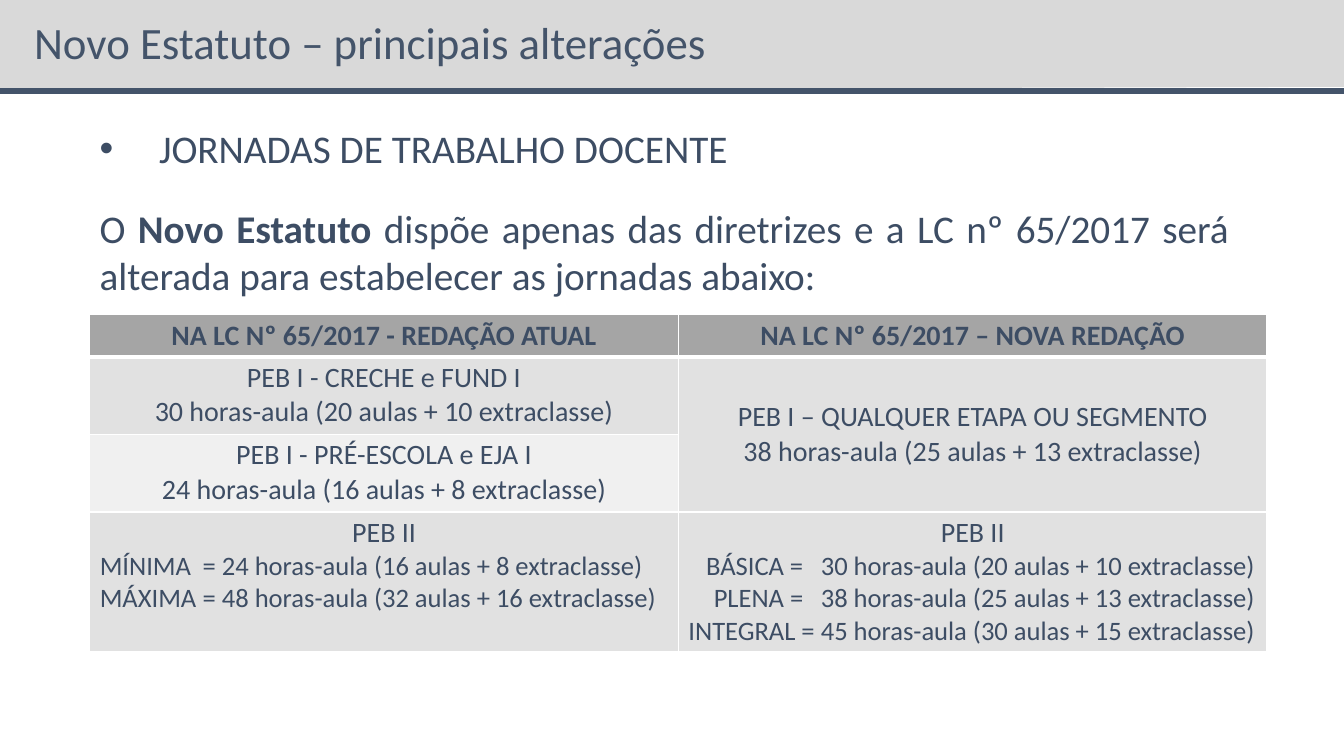
"""Build the slide that compares the current and the new teaching workloads."""
from dataclasses import dataclass

from lxml import etree
from pptx import Presentation
from pptx import util as u
from pptx.dml import color
from pptx.enum import shapes, text
from pptx.oxml import ns

FONT = "Calibri"
INK = "3D4D64"
SLATE = "44546A"
GREY = "E1E1E1"
LEFT, CENTER, JUSTIFY = text.PP_ALIGN.LEFT, text.PP_ALIGN.CENTER, text.PP_ALIGN.JUSTIFY
TOP, MIDDLE = text.MSO_ANCHOR.TOP, text.MSO_ANCHOR.MIDDLE


@dataclass
class Rule:
    start: tuple[float, float]
    end: tuple[float, float]
    color: str
    width: float


@dataclass
class Entry:
    row: int
    column: int
    heading: str
    lines: tuple[str, ...] = ()
    fill: str = GREY
    bold: bool = False
    anchor: text.MSO_ANCHOR = TOP
    line_size: float = 20
    line_align: text.PP_ALIGN = CENTER
    tabs: tuple[tuple[float, str], ...] = ()


RULES = [
    Rule((0, 32.4), (960, 29.5), "D9D9D9", 65),
    Rule((0, 64.8), (960, 64.8), SLATE, 4),
]
ROW_HEIGHTS = [30, 55.5, 55.5, 99.5]
COLUMN_WIDTH = 420.5
ENTRIES = [
    Entry(0, 0, "NA LC Nº 65/2017 - REDAÇÃO ATUAL", fill="A5A5A5", bold=True),
    Entry(0, 1, "NA LC Nº 65/2017 – NOVA REDAÇÃO", fill="A5A5A5", bold=True),
    Entry(1, 0, "PEB I - CRECHE e FUND I", ("30 horas-aula (20 aulas + 10 extraclasse)",)),
    Entry(1, 1, "PEB I – QUALQUER ETAPA OU SEGMENTO",
          ("38 horas-aula (25 aulas + 13 extraclasse)",), anchor=MIDDLE),
    Entry(2, 0, "PEB I - PRÉ-ESCOLA e EJA I",
          ("24 horas-aula (16 aulas + 8 extraclasse)",), fill="F0F0F0"),
    Entry(3, 0, "PEB II",
          ("MÍNIMA\t= 24 horas-aula (16 aulas + 8 extraclasse)",
           "MÁXIMA\t= 48 horas-aula (32 aulas + 16 extraclasse)"),
          line_size=19, line_align=LEFT, tabs=((73.5, "l"),)),
    Entry(3, 1, "PEB II",
          ("\tBÁSICA =\t30 horas-aula (20 aulas + 10 extraclasse)",
           "\tPLENA =\t38 horas-aula (25 aulas + 13 extraclasse)",
           "INTEGRAL =\t45 horas-aula (30 aulas + 15 extraclasse)"),
          anchor=MIDDLE, line_size=19, line_align=LEFT, tabs=((82, "r"), (94.5, "l"))),
]


def rgb(value: str) -> color.RGBColor:
    return color.RGBColor.from_string(value)


def style(font, size: float, ink: str = INK, bold: bool = False) -> None:
    font.name, font.size, font.bold = FONT, u.Pt(size), bold
    font.color.rgb = rgb(ink)


def draw_rule(slide, rule: Rule) -> None:
    line = slide.shapes.add_connector(
        shapes.MSO_CONNECTOR.STRAIGHT, *(u.Pt(value) for value in rule.start + rule.end))
    line.line.color.rgb = rgb(rule.color)
    line.line.width = u.Pt(rule.width)
    etree.SubElement(line.element.spPr, ns.qn("a:effectLst"))


def add_text_box(slide, left: float, top: float, width: float, height: float):
    frame = slide.shapes.add_textbox(*(u.Pt(v) for v in (left, top, width, height))).text_frame
    frame.word_wrap = True
    return frame


def draw_title(slide) -> None:
    frame = add_text_box(slide, 17.3, 10.8, 828, 43.2)
    frame.vertical_anchor = MIDDLE
    frame.text = "Novo Estatuto – principais alterações"
    frame.paragraphs[0].line_spacing = 0.9
    style(frame.paragraphs[0].runs[0].font, 32, SLATE)


def draw_introduction(slide) -> None:
    frame = add_text_box(slide, 64.1, 85, 820.8, 191.5)
    frame.text = "JORNADAS DE TRABALHO DOCENTE"
    topic, sentence = frame.paragraphs[0], frame.add_paragraph()
    properties = topic._p.get_or_add_pPr()
    properties.set("marL", str(u.Pt(42.5)))
    properties.set("indent", str(-u.Pt(42.5)))
    etree.SubElement(properties, ns.qn("a:buFont")).set("typeface", "Arial")
    etree.SubElement(properties, ns.qn("a:buChar")).set("char", "•")
    for part in ("O ", "Novo Estatuto ", "dispõe apenas das diretrizes e a LC nº 65/2017 será "
                 "alterada para estabelecer as jornadas abaixo:"):
        sentence.add_run().text = part
    sentence.space_before = u.Pt(12)
    for paragraph in (topic, sentence):
        paragraph.alignment = JUSTIFY
        paragraph.space_after = u.Pt(12)
        for run in paragraph.runs:
            style(run.font, 28, bold=run.text.startswith("Novo"))


def set_borders(cell, top: float, bottom: float) -> None:
    properties = cell._tc.get_or_add_tcPr()
    widths = {"a:lnL": 1, "a:lnR": 1, "a:lnT": top, "a:lnB": bottom}
    for position, (tag, width) in enumerate(widths.items()):
        border = etree.Element(ns.qn(tag), w=str(u.Pt(width)))
        fill = etree.SubElement(border, ns.qn("a:solidFill"))
        etree.SubElement(fill, ns.qn("a:srgbClr")).set("val", "FFFFFF")
        properties.insert(position, border)


def fill_entry(table, entry: Entry) -> None:
    cell = table.cell(entry.row, entry.column)
    cell.fill.solid()
    cell.fill.fore_color.rgb = rgb(entry.fill)
    cell.vertical_anchor = entry.anchor
    cell.margin_top = cell.margin_bottom = u.Pt(2.8)
    frame = cell.text_frame
    frame.text = entry.heading
    frame.paragraphs[0].alignment = CENTER
    style(frame.paragraphs[0].runs[0].font, 20, bold=entry.bold)
    for line in entry.lines:
        paragraph = frame.add_paragraph()
        paragraph.text = line
        paragraph.alignment = entry.line_align
        if entry.tabs:
            stops = etree.SubElement(paragraph._p.get_or_add_pPr(), ns.qn("a:tabLst"))
            for position, side in entry.tabs:
                etree.SubElement(stops, ns.qn("a:tab"), pos=str(u.Pt(position)), algn=side)
        style(paragraph.runs[0].font, entry.line_size)


def draw_workloads(slide) -> None:
    table = slide.shapes.add_table(
        len(ROW_HEIGHTS), 2, u.Pt(64.1), u.Pt(224.8),
        u.Pt(2 * COLUMN_WIDTH), u.Pt(sum(ROW_HEIGHTS))).table
    for column in table.columns:
        column.width = u.Pt(COLUMN_WIDTH)
    for row, height in zip(table.rows, ROW_HEIGHTS):
        row.height = u.Pt(height)
    table.cell(1, 1).merge(table.cell(2, 1))
    for entry in ENTRIES:
        fill_entry(table, entry)
    for index, row in enumerate(table.rows):
        for cell in row.cells:
            set_borders(cell, 3 if index == 1 else 1, 3 if index == 0 else 1)


def main() -> None:
    presentation = Presentation()
    presentation.slide_width, presentation.slide_height = u.Pt(960), u.Pt(540)
    slide = presentation.slides.add_slide(presentation.slide_layouts[6])
    for rule in RULES:
        draw_rule(slide, rule)
    draw_title(slide)
    draw_introduction(slide)
    draw_workloads(slide)
    presentation.save("out.pptx")


if __name__ == "__main__":
    main()
